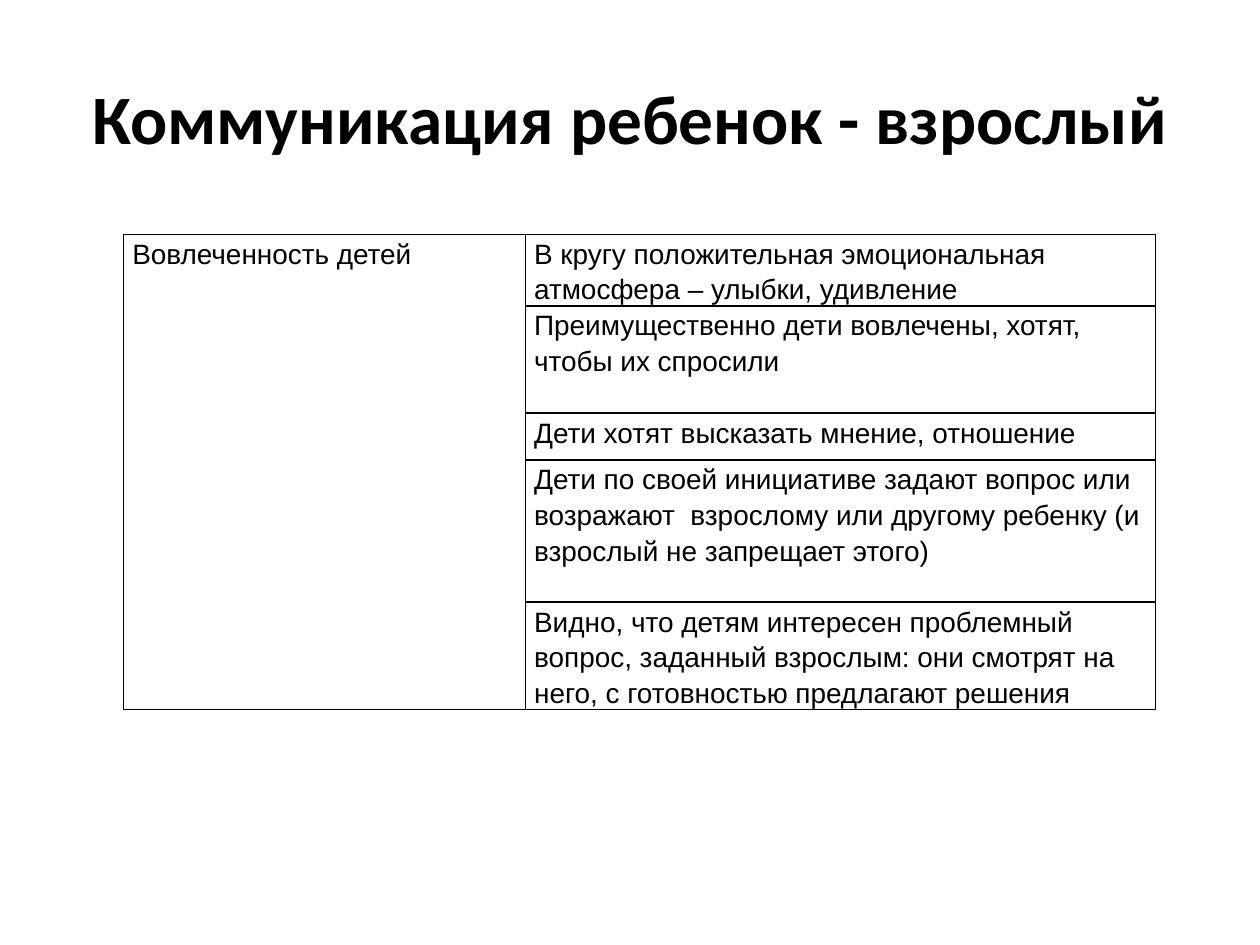
from lxml.etree import SubElement
from pptx import Presentation
from pptx.dml.color import RGBColor
from pptx.enum.text import MSO_ANCHOR, PP_ALIGN
from pptx.oxml.ns import qn
from pptx.util import Inches, Pt

BLACK = RGBColor(0, 0, 0)
TITLE = "Коммуникация ребенок - взрослый"
CRITERION = "Вовлеченность детей"
COL_WIDTHS = (3.19, 5)
# Row height in inches and the sign of involvement
SIGNS = [
    (0.57, "В кругу положительная эмоциональная атмосфера – улыбки, удивление"),
    (0.85, "Преимущественно дети вовлечены, хотят, чтобы их спросили"),
    (0.37, "Дети хотят высказать мнение, отношение"),
    (1.13, "Дети по своей инициативе задают вопрос или возражают  взрослому "
           "или другому ребенку (и взрослый не запрещает этого)"),
    (0.85, "Видно, что детям интересен проблемный вопрос, заданный взрослым: "
           "они смотрят на него, с готовностью предлагают решения"),
]


def format_font(p, name, size, bold=False):
    for r in p.runs:
        r.font.name = name
        r.font.size = Pt(size)
        r.font.bold = bold
        r.font.color.rgb = BLACK


def add_title(slide):
    sp = slide.shapes.title
    sp.left, sp.top = Inches(0.5), Inches(0.3)
    sp.width, sp.height = Inches(9), Inches(1.25)
    tf = sp.text_frame
    tf.text = TITLE
    tf.word_wrap = True
    tf.vertical_anchor = MSO_ANCHOR.MIDDLE
    p = tf.paragraphs[0]
    p.alignment = PP_ALIGN.CENTER
    format_font(p, "Calibri", 39.6, bold=True)


def set_borders(cell):
    tc_pr = cell._tc.get_or_add_tcPr()
    for side in ("a:lnL", "a:lnR", "a:lnT", "a:lnB"):
        ln = SubElement(tc_pr, qn(side), w=str(Pt(1)))
        fill = SubElement(ln, qn("a:solidFill"))
        SubElement(fill, qn("a:srgbClr"), val=str(BLACK))


def format_cell(cell):
    set_borders(cell)
    cell.fill.background()
    cell.margin_left = cell.margin_right = Inches(0.07)
    cell.margin_top = cell.margin_bottom = 0
    p = cell.text_frame.paragraphs[0]
    p.line_spacing = 1.15
    format_font(p, "Arial", 16)


def add_criteria_table(slide):
    height = sum(h for h, _ in SIGNS)
    table = slide.shapes.add_table(
        len(SIGNS), len(COL_WIDTHS), Inches(0.98), Inches(1.86),
        Inches(sum(COL_WIDTHS)), Inches(height)).table
    table.first_row = table.horz_banding = False
    for col, width in zip(table.columns, COL_WIDTHS):
        col.width = Inches(width)
    table.cell(0, 0).merge(table.cell(len(SIGNS) - 1, 0))
    table.cell(0, 0).text = CRITERION
    for i, (row_height, sign) in enumerate(SIGNS):
        table.rows[i].height = Inches(row_height)
        table.cell(i, 1).text = sign
    for cell in table.iter_cells():
        format_cell(cell)


def main():
    prs = Presentation()
    prs.slide_width, prs.slide_height = Inches(10), Inches(7.5)
    slide = prs.slides.add_slide(prs.slide_layouts[5])
    add_title(slide)
    add_criteria_table(slide)
    prs.save("out.pptx")


if __name__ == "__main__":
    main()
